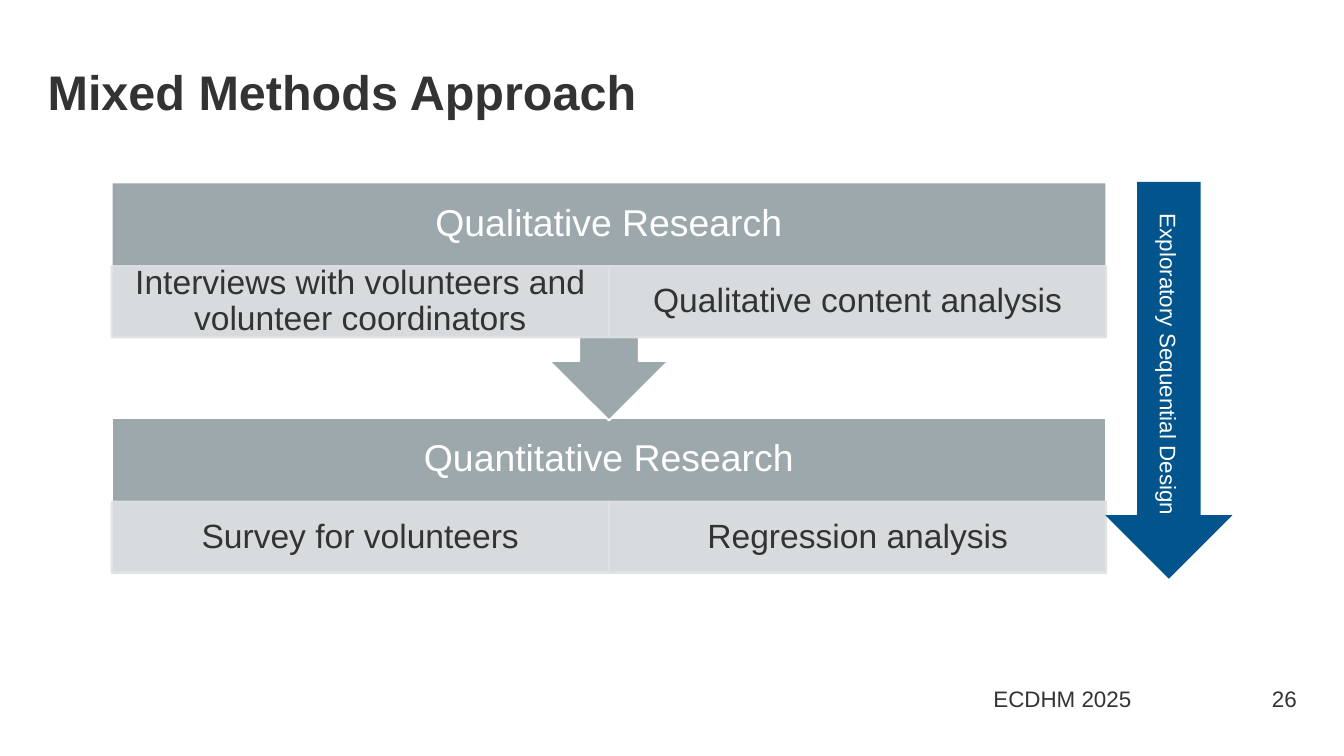
from lxml import etree
from pptx import Presentation
from pptx.dml.color import RGBColor
from pptx.enum.shapes import MSO_SHAPE
from pptx.enum.text import MSO_ANCHOR, MSO_AUTO_SIZE, PP_ALIGN
from pptx.oxml.ns import qn
from pptx.util import Cm, Pt

RECTANGLE = MSO_SHAPE.RECTANGLE
DOWN_CALLOUT = MSO_SHAPE.DOWN_ARROW_CALLOUT
RIGHT_ARROW = MSO_SHAPE.RIGHT_ARROW
LEFT, CENTER, RIGHT = PP_ALIGN.LEFT, PP_ALIGN.CENTER, PP_ALIGN.RIGHT
TOP, MIDDLE = MSO_ANCHOR.TOP, MSO_ANCHOR.MIDDLE

FONT = "Arial"
COLORS = {
    "text": "333333",
    "white": "FFFFFF",
    "phase": "9DA8AD",
    "step": "DFE1E3",
    "design": "01558C",
}

# Phase geometry in cm
PHASE_LEFT, PHASE_WIDTH = 2.11, 18.8
HEADING_HEIGHT, STEP_HEIGHT = 1.58, 1.35
PHASES = [
    # heading, steps, top, outline, height
    ("Quantitative Research",
     ["Survey for volunteers", "Regression analysis"],
     7.9, RECTANGLE, 2.92),
    ("Qualitative Research",
     ["Interviews with volunteers and volunteer coordinators",
      "Qualitative content analysis"],
     3.45, DOWN_CALLOUT, 4.5),
]


def rgb(name):
    return RGBColor.from_string(COLORS[name])


def write(shape, text, size, color, align=CENTER, anchor=MIDDLE,
          insets=(0.25, 0.13, 0.25, 0.13), spacing=1.0, bold=False):
    """Fill a shape with one paragraph; insets are left, top, right, bottom."""
    frame = shape.text_frame
    frame.text = text
    frame.word_wrap = True
    frame.auto_size = MSO_AUTO_SIZE.NONE
    frame.vertical_anchor = anchor
    (frame.margin_left, frame.margin_top,
     frame.margin_right, frame.margin_bottom) = map(Cm, insets)
    paragraph = frame.paragraphs[0]
    paragraph.alignment = align
    paragraph.line_spacing = spacing
    font = paragraph.font
    font.name, font.size, font.bold = FONT, Pt(size), bold
    font.color.rgb = rgb(color)


def add_label(slide, box, text, size, color, **layout):
    label = slide.shapes.add_textbox(*map(Cm, box))
    write(label, text, size, color, **layout)


def add_block(slide, outline, box, fill, line=None):
    block = slide.shapes.add_shape(outline, *map(Cm, box))
    block.shadow.inherit = False
    block.fill.solid()
    block.fill.fore_color.rgb = rgb(fill)
    if line:
        block.line.color.rgb = rgb(line)
        block.line.width = Pt(1)
    else:
        block.line.fill.background()
    return block


def set_opacity(shape, percent):
    """Apply the opacity to both fill and line."""
    for color in shape.element.spPr.iter(qn("a:srgbClr")):
        etree.SubElement(color, qn("a:alpha"), val=str(percent * 1000))


def add_title(slide, text):
    title = slide.shapes.title
    title.left, title.top, title.width, title.height = map(
        Cm, (0.9, 0.94, 23.6, 1.6))
    write(title, text, 26, "text", align=LEFT, anchor=TOP,
          insets=(0, 0.13, 0.25, 0.13), spacing=1.1, bold=True)


def add_phase(slide, heading, steps, top, outline, height):
    block = add_block(slide, outline, (PHASE_LEFT, top, PHASE_WIDTH, height),
                      "phase", "white")
    if outline == DOWN_CALLOUT:
        block.adjustments[3] = 0.65  # share of the height above the arrow
    add_label(slide, (PHASE_LEFT, top, PHASE_WIDTH, HEADING_HEIGHT),
              heading, 20, "white", insets=(0.4,) * 4, spacing=0.9)

    step_width = PHASE_WIDTH / len(steps)
    for column, step in enumerate(steps):
        cell = add_block(
            slide, RECTANGLE,
            (PHASE_LEFT + column * step_width, top + HEADING_HEIGHT,
             step_width, STEP_HEIGHT), "step", "step")
        set_opacity(cell, 90)
        write(cell, step, 18, "text",
              insets=(0.36, 0.08, 0.36, 0.08), spacing=0.9)


def add_design_arrow(slide, text):
    arrow = add_block(slide, RIGHT_ARROW, (18.34, 5.99, 7.5, 2.4), "design")
    arrow.rotation = 90
    write(arrow, text, 12, "white")


def add_footer(slide, event, number):
    add_label(slide, (17.48, 12.83, 5.2, 0.76), event, 12, "text")
    add_label(slide, (22.68, 12.83, 1.83, 0.76), number, 12, "text",
              align=RIGHT, insets=(0.25, 0.13, 0, 0.13))


def main():
    prs = Presentation()
    prs.slide_width, prs.slide_height = Cm(25.4), Cm(14.29)
    slide = prs.slides.add_slide(prs.slide_layouts.get_by_name("Title Only"))

    add_footer(slide, "ECDHM 2025", "26")
    add_title(slide, "Mixed Methods Approach")
    # The callout comes last so its arrow tip lies over the lower phase
    for phase in PHASES:
        add_phase(slide, *phase)
    add_design_arrow(slide, "Exploratory Sequential Design")

    prs.save("out.pptx")


if __name__ == "__main__":
    main()
